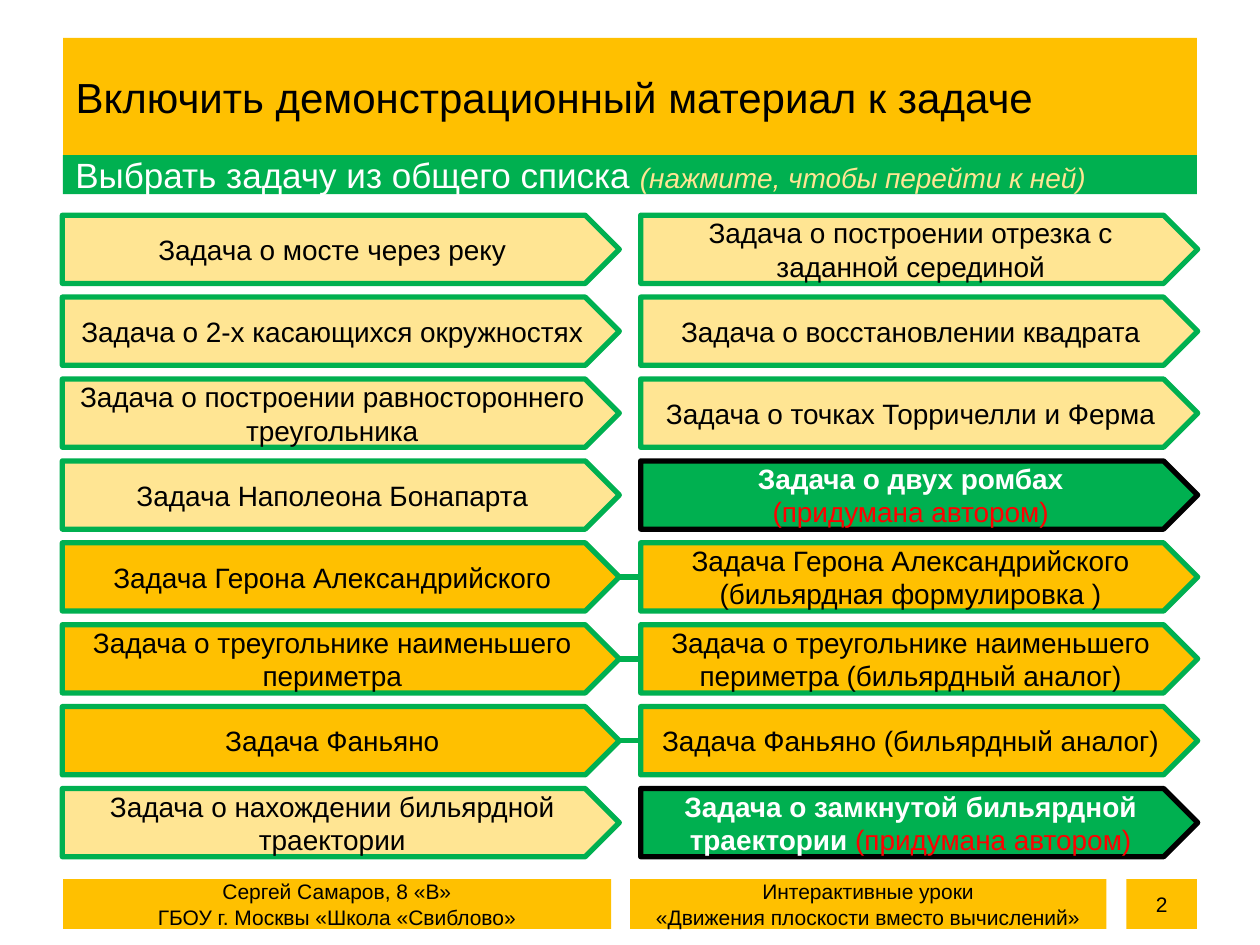
import pptx
import pptx.util
import pptx.dml.color
import pptx.enum.shapes
import pptx.enum.text
import pptx.oxml.ns
import lxml.etree

Pt = pptx.util.Pt
KIND = pptx.enum.shapes.MSO_SHAPE
ALIGN = pptx.enum.text.PP_ALIGN
GOLD, GREEN, CREAM = "FFC000", "00B050", "FFE593"
BLACK, WHITE, RED = "000000", "FFFFFF", "FF0000"
NOTE = "(придумана автором)"

ROWS = [
    (CREAM, "Задача о мосте через реку",
     "Задача о построении отрезка с заданной серединой"),
    (CREAM, "Задача о 2-х касающихся окружностях",
     "Задача о восстановлении квадрата"),
    (CREAM, "Задача о построении равностороннего треугольника",
     "Задача о точках Торричелли и Ферма"),
    (CREAM, "Задача Наполеона Бонапарта", "Задача о двух ромбах\n" + NOTE),
    (GOLD, "Задача Герона Александрийского",
     "Задача Герона Александрийского (бильярдная формулировка )"),
    (GOLD, "Задача о треугольнике наименьшего периметра",
     "Задача о треугольнике наименьшего периметра (бильярдный аналог)"),
    (GOLD, "Задача Фаньяно", "Задача Фаньяно (бильярдный аналог)"),
    (CREAM, "Задача о нахождении бильярдной траектории",
     "Задача о замкнутой бильярдной траектории " + NOTE),
]


def paint(part, color):
    if hasattr(part, "solid"):
        part.solid()
        part = part.fore_color
    else:
        part = part.color
    part.rgb = pptx.dml.color.RGBColor.from_string(color)


def style(run, size, color, bold=False, slant=False):
    font = run.font
    font.name, font.size = "Arial", Pt(size)
    font.bold, font.italic = bold, slant
    paint(font, color)


def write(shape, text, size, color, align=ALIGN.CENTER, bold=False):
    frame = shape.text_frame
    frame.text = text
    frame.word_wrap = True
    frame.auto_size = pptx.enum.text.MSO_AUTO_SIZE.NONE
    frame.vertical_anchor = pptx.enum.text.MSO_ANCHOR.MIDDLE
    for par in frame.paragraphs:
        par.alignment = align
        for run in par.runs:
            style(run, size, color, bold)


def add_note(shape, text, size, color, slant=False):
    run = shape.text_frame.paragraphs[-1].add_run()
    run.text = text
    style(run, size, color, slant=slant)


def add_box(slide, kind, box, fill, edge=None):
    shape = slide.shapes.add_shape(kind, *map(Pt, box))
    shape.shadow.inherit = False
    paint(shape.fill, fill)
    if edge:
        paint(shape.line, edge)
        shape.line.width = Pt(3)
    else:
        shape.line.fill.background()
    return shape


def add_head(slide, box):
    left, top, width, height = box
    deep = 67
    title = slide.shapes.title
    title.left, title.top = Pt(left), Pt(top)
    title.width, title.height = Pt(width), Pt(deep)
    paint(title.fill, GOLD)
    write(title, "Включить демонстрационный материал к задаче", 24, BLACK, ALIGN.LEFT)
    band = add_box(slide, KIND.RECTANGLE, (left, top + deep, width, height - deep), GREEN)
    write(band, "Выбрать задачу из общего списка ", 20, WHITE, ALIGN.LEFT)
    add_note(band, "(нажмите, чтобы перейти к ней)", 16, CREAM, slant=True)


def add_task(slide, box, text, fill):
    own = text.endswith(NOTE)
    shape = add_box(slide, KIND.PENTAGON, box, GREEN if own else fill,
                    BLACK if own else GREEN)
    write(shape, text.removesuffix(NOTE), 16, WHITE if own else BLACK, bold=own)
    if own:
        add_note(shape, NOTE, 16, RED)
        shape.text_frame.paragraphs[-1].alignment = ALIGN.CENTER
    return shape


def add_link(slide, start, end):
    line = slide.shapes.add_connector(
        pptx.enum.shapes.MSO_CONNECTOR.STRAIGHT, 0, 0, 0, 0)
    line.begin_connect(start, 3)
    line.end_connect(end, 1)
    paint(line.line, GREEN)
    line.line.width = Pt(3)
    props = line._element.spPr
    lxml.etree.SubElement(props, pptx.oxml.ns.qn("a:effectLst"))


def add_tasks(slide, box):
    left, top, width, height = box
    gap, deep = 12.2, 39
    wide = (width - gap) / 2
    step = (height - deep) / (len(ROWS) - 1)
    for row, (fill, *texts) in enumerate(ROWS):
        pair = [add_task(slide, (left + col * (wide + gap), top + row * step, wide, deep),
                         text, fill)
                for col, text in enumerate(texts)]
        if fill == GOLD:
            add_link(slide, *pair)


def add_foot(slide, box):
    left, top, width, height = box
    parts = [
        (0, 313.2, "Сергей Самаров, 8 «В»\nГБОУ г. Москвы «Школа «Свиблово»"),
        (324, 272.2, "Интерактивные уроки\n«Движения плоскости вместо вычислений»"),
        (width - 40.4, 40.4, "2"),
    ]
    for shift, wide, text in parts:
        shape = add_box(slide, KIND.RECTANGLE, (left + shift, top, wide, height), GOLD)
        write(shape, text, 12, BLACK)


def main():
    deck = pptx.Presentation()
    deck.slide_width, deck.slide_height = Pt(720), Pt(540)
    slide = deck.slides.add_slide(deck.slide_layouts[5])
    add_head(slide, (36, 21.6, 648, 89.4))
    add_tasks(slide, (35.6, 123, 648.8, 366.6))
    add_foot(slide, (36, 502.4, 648, 28.4))
    deck.save("out.pptx")


if __name__ == "__main__":
    main()
